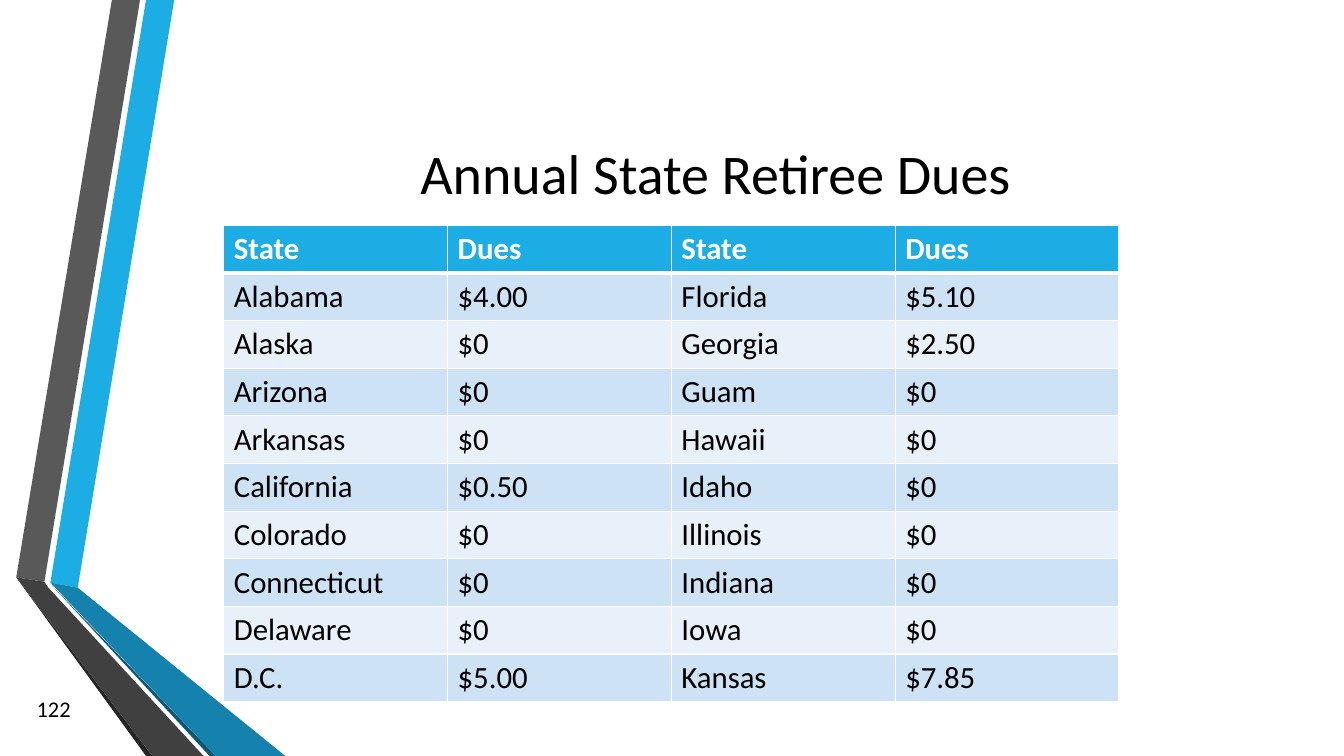
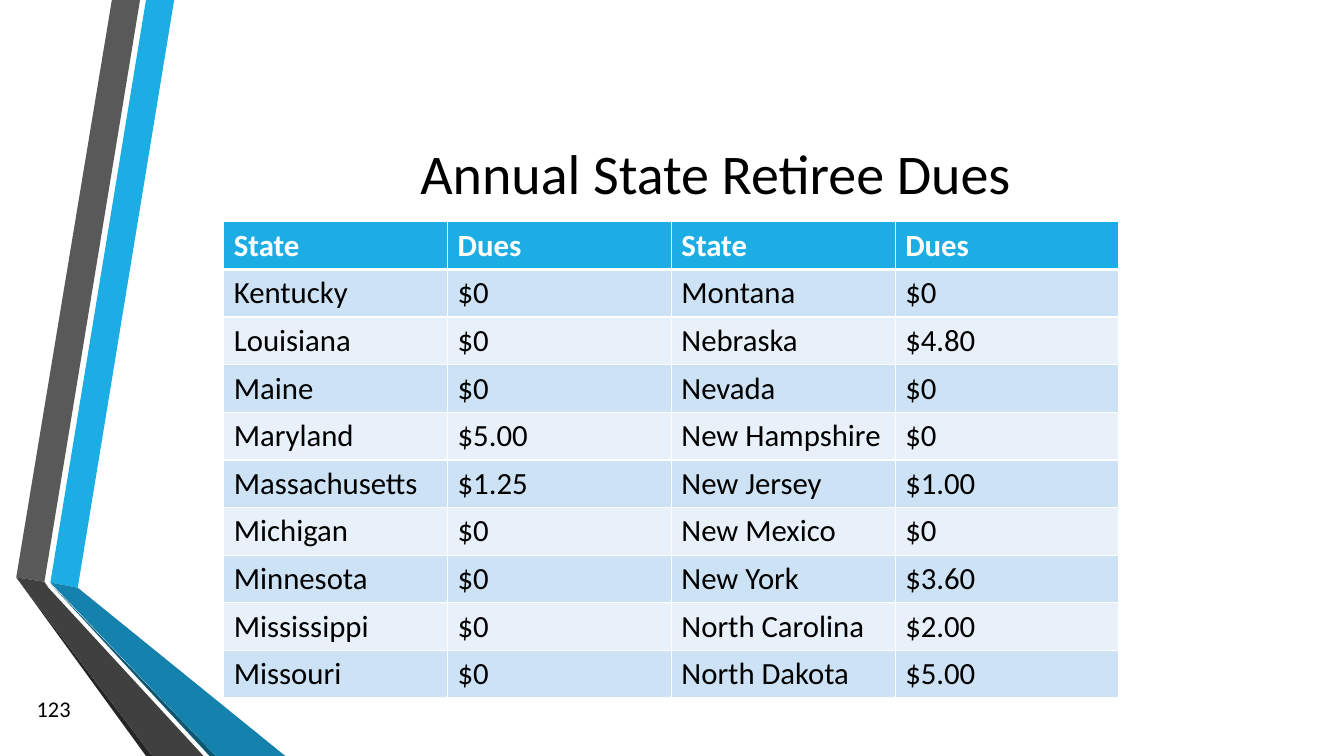
from dataclasses import dataclass

from lxml import etree
from pptx import Presentation
from pptx.dml.color import RGBColor
from pptx.enum.text import MSO_ANCHOR, PP_ALIGN
from pptx.oxml.ns import qn
from pptx.util import Cm, Pt

MIDDLE = MSO_ANCHOR.MIDDLE
CENTER, LEFT, RIGHT = PP_ALIGN.CENTER, PP_ALIGN.LEFT, PP_ALIGN.RIGHT


@dataclass(frozen=True)
class Theme:
    font: str = "Calibri"
    title_size: int = 40
    table_size: int = 22
    number_size: int = 16
    ink: str = "000000"
    paper: str = "FFFFFF"
    accent: str = "1CADE4"
    accent_fold: str = "1482AC"
    accent_edge: str = "0E5772"
    gray: str = "595959"
    gray_fold: str = "404040"
    gray_edge: str = "262626"
    bands: tuple = ("CDE3F5", "E8F1FA")
    rule: int = 1
    header_rule: int = 3


THEME = Theme()
SLIDE_WIDTH, SLIDE_HEIGHT = Cm(33.87), Cm(19.05)
RIBBON_ORIGIN = (Cm(0.41), Cm(0))
TITLE_BOX = (Cm(4.11), Cm(1.9), Cm(27.84), Cm(4.88))
NUMBER_BOX = (Cm(0.51), Cm(17.35), Cm(1.52), Cm(1.02))
TABLE_LEFT, COLUMN_WIDTH, ROW_HEIGHT = Cm(5.64), Cm(5.64), Cm(1.2)

# Ribbon outlines in centimetres from the ribbon origin, back to front
RIBBONS = (
    (THEME.accent, ((0.86, 14.68), (1.55, 14.81), (3.98, 0), (3.27, 0))),
    (THEME.gray, ((3.12, 0), (2.41, 0), (0, 14.55), (0.71, 14.66))),
    (THEME.gray_edge, ((0, 14.55), (3.27, 19.05), (3.43, 19.05))),
    (THEME.accent_edge, ((0.86, 14.71), (4.87, 19.05), (5.03, 19.05))),
    (THEME.accent_fold,
     ((0.86, 14.68), (5.03, 19.05), (6.78, 19.05), (1.55, 14.81))),
    (THEME.gray_fold,
     ((4.72, 19.05), (0.81, 14.81), (0.71, 14.66), (0, 14.55), (3.43, 19.05))),
)

TITLE = "Annual State Retiree Dues"
FIRST_NUMBER = 122
HEADER = ("State", "Dues", "State", "Dues")
DUES_PAGES = (
    (Cm(5.68), (
        ("Alabama", "$4.00", "Florida", "$5.10"),
        ("Alaska", "$0", "Georgia", "$2.50"),
        ("Arizona", "$0", "Guam", "$0"),
        ("Arkansas", "$0", "Hawaii", "$0"),
        ("California", "$0.50", "Idaho", "$0"),
        ("Colorado", "$0", "Illinois", "$0"),
        ("Connecticut", "$0", "Indiana", "$0"),
        ("Delaware", "$0", "Iowa", "$0"),
        ("D.C.", "$5.00", "Kansas", "$7.85"),
    )),
    (Cm(5.59), (
        ("Kentucky", "$0", "Montana", "$0"),
        ("Louisiana", "$0", "Nebraska", "$4.80"),
        ("Maine", "$0", "Nevada", "$0"),
        ("Maryland", "$5.00", "New Hampshire", "$0"),
        ("Massachusetts", "$1.25", "New Jersey", "$1.00"),
        ("Michigan", "$0", "New Mexico", "$0"),
        ("Minnesota", "$0", "New York", "$3.60"),
        ("Mississippi", "$0", "North Carolina", "$2.00"),
        ("Missouri", "$0", "North Dakota", "$5.00"),
    )),
)


def write(frame, text, size, align, color=THEME.ink, bold=False):
    """Fill a text frame with one formatted paragraph."""
    frame.text = text
    paragraph = frame.paragraphs[0]
    paragraph.alignment = align
    font = paragraph.runs[0].font
    font.name, font.size, font.bold = THEME.font, Pt(size), bold
    font.color.rgb = RGBColor.from_string(color)


def add_text(slide, box, text, size, align):
    frame = slide.shapes.add_textbox(*box).text_frame
    frame.word_wrap = True
    frame.vertical_anchor = MIDDLE
    write(frame, text, size, align)


def add_ribbons(slide, origin):
    for color, outline in RIBBONS:
        start, *rest = [(Cm(x), Cm(y)) for x, y in outline]
        builder = slide.shapes.build_freeform(*start)
        builder.add_line_segments(rest, close=True)
        ribbon = builder.convert_to_shape(*origin)
        ribbon.shadow.inherit = False
        ribbon.fill.solid()
        ribbon.fill.fore_color.rgb = RGBColor.from_string(color)
        ribbon.line.fill.background()


def set_borders(cell, top, bottom):
    """Rule all four sides of a cell; top and bottom widths are in points."""
    widths = {"a:lnL": THEME.rule, "a:lnR": THEME.rule,
              "a:lnT": top, "a:lnB": bottom}
    properties = cell._tc.get_or_add_tcPr()
    for position, (side, width) in enumerate(widths.items()):
        line = etree.Element(qn(side), w=str(Pt(width)))
        fill = etree.SubElement(line, qn("a:solidFill"))
        etree.SubElement(fill, qn("a:srgbClr"), val=THEME.paper)
        properties.insert(position, line)


def add_dues_table(slide, left, top, entries):
    rows = (HEADER, *entries)
    table = slide.shapes.add_table(
        len(rows), len(HEADER), left, top,
        COLUMN_WIDTH * len(HEADER), ROW_HEIGHT * len(rows)).table
    for r, row in enumerate(rows):
        is_header = r == 0
        background = THEME.accent if is_header else THEME.bands[(r - 1) % 2]
        color = THEME.paper if is_header else THEME.ink
        top_rule = THEME.header_rule if r == 1 else THEME.rule
        bottom_rule = THEME.header_rule if is_header else THEME.rule
        for c, text in enumerate(row):
            cell = table.cell(r, c)
            cell.vertical_anchor = MIDDLE
            cell.fill.solid()
            cell.fill.fore_color.rgb = RGBColor.from_string(background)
            set_borders(cell, top_rule, bottom_rule)
            write(cell.text_frame, text, THEME.table_size, LEFT, color, is_header)


def add_dues_slide(deck, number, table_top, entries):
    slide = deck.slides.add_slide(deck.slide_layouts[6])
    add_ribbons(slide, RIBBON_ORIGIN)
    add_text(slide, TITLE_BOX, TITLE, THEME.title_size, CENTER)
    add_dues_table(slide, TABLE_LEFT, table_top, entries)
    add_text(slide, NUMBER_BOX, str(number), THEME.number_size, RIGHT)


def main():
    deck = Presentation()
    deck.slide_width, deck.slide_height = SLIDE_WIDTH, SLIDE_HEIGHT
    for number, (table_top, entries) in enumerate(DUES_PAGES, FIRST_NUMBER):
        add_dues_slide(deck, number, table_top, entries)
    deck.save("out.pptx")


if __name__ == "__main__":
    main()
